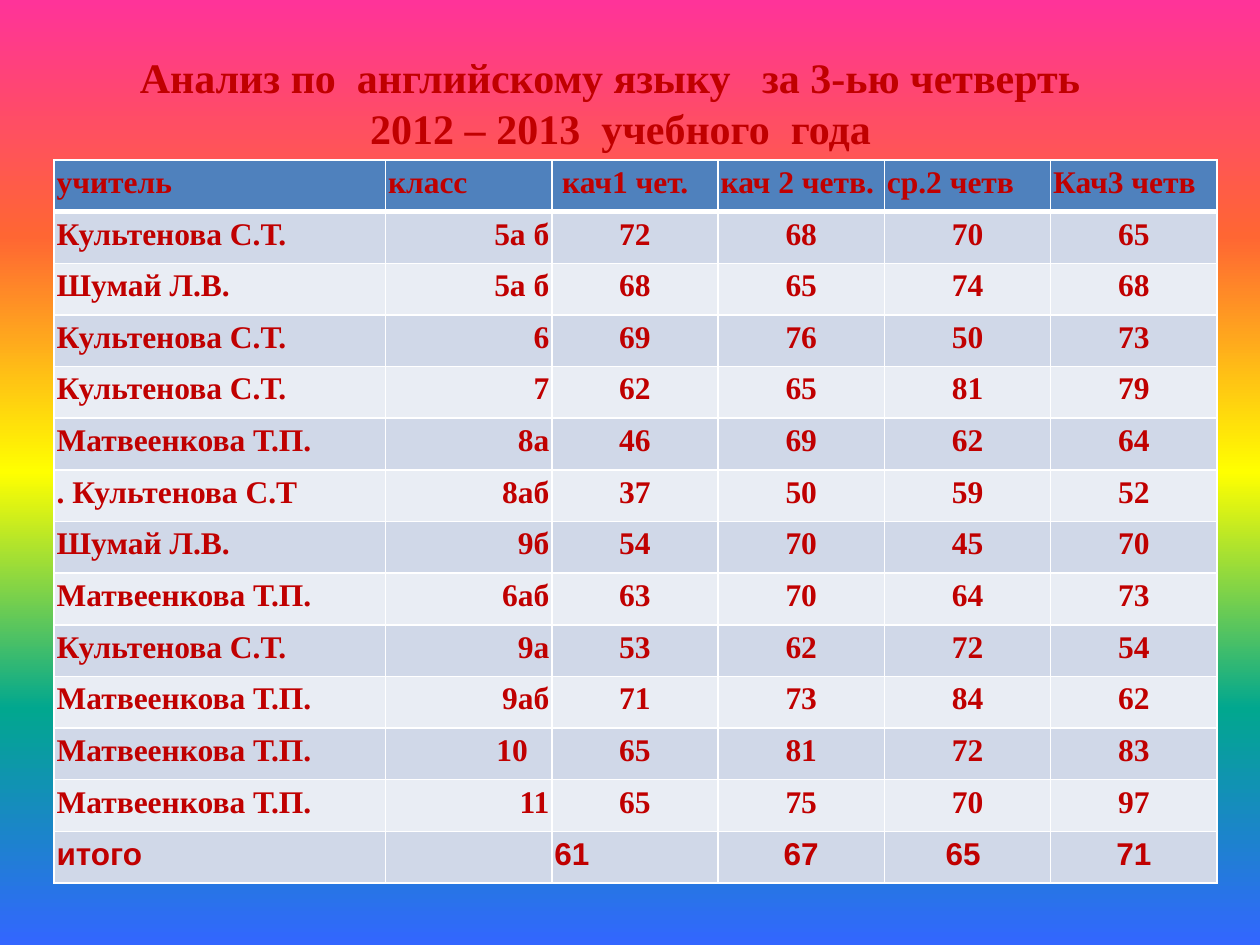
from lxml.etree import SubElement
from pptx import Presentation
from pptx.dml.color import RGBColor
from pptx.enum.text import MSO_ANCHOR, PP_ALIGN
from pptx.oxml import parse_xml
from pptx.oxml.ns import nsdecls, qn
from pptx.util import Inches, Pt

SERIF, SANS = "Times New Roman", "Arial"
TEXT, WHITE, HEADER_FILL = "C00000", "FFFFFF", "4F81BD"
BANDS = ("D0D8E8", "E9EDF4")
RAINBOW = ("FF3399", "FF6633", "FFFF00", "01A78F", "3366FF")
LEFT, CENTER, RIGHT = PP_ALIGN.LEFT, PP_ALIGN.CENTER, PP_ALIGN.RIGHT

TITLE = ("Анализ по  английскому языку   за 3-ью четверть  ",
         "2012 – 2013  учебного  года")
HEADER = ("учитель", "класс", " кач1 чет.", "кач 2 четв.", "ср.2 четв", "Кач3 четв")
RESULTS = (
    ("Культенова С.Т.", "5а б", 72, 68, 70, 65),
    ("Шумай Л.В.", "5а б", 68, 65, 74, 68),
    ("Культенова С.Т.", "6", 69, 76, 50, 73),
    ("Культенова С.Т.", "7", 62, 65, 81, 79),
    ("Матвеенкова Т.П.", "8а", 46, 69, 62, 64),
    (". Культенова С.Т", "8аб", 37, 50, 59, 52),
    ("Шумай Л.В.", "9б", 54, 70, 45, 70),
    ("Матвеенкова Т.П.", "6аб", 63, 70, 64, 73),
    ("Культенова С.Т.", "9а", 53, 62, 72, 54),
    ("Матвеенкова Т.П.", "9аб", 71, 73, 84, 62),
    ("Матвеенкова Т.П.", "10", 65, 81, 72, 83),
    ("Матвеенкова Т.П.", "11", 65, 75, 70, 97),
)
TOTALS = ("итого", "", 61, 67, "65 ", 71)
COLUMN_WIDTHS = (2.63,) + (1.32,) * 5
ROW_HEIGHT = 0.41


def rgb(color):
    return RGBColor.from_string(color)


def add_run(p, text, size, font=SERIF):
    r = p.add_run()
    r.text = text
    r.font.name, r.font.size, r.font.bold = font, Pt(size), True
    r.font.color.rgb = rgb(TEXT)


def fill_background(s, colors):
    """Spread the colours evenly from the top of the slide to the bottom."""
    fill = s.background.fill
    fill.gradient()
    fill.gradient_angle = 270
    stops = s.background._cSld.find(".//" + qn("a:gsLst"))
    for stop in list(stops):
        stops.remove(stop)
    for i, color in enumerate(colors):
        stop = SubElement(stops, qn("a:gs"), pos=str(i * 100000 // (len(colors) - 1)))
        SubElement(stop, qn("a:srgbClr"), val=color)


def add_title(s, lines):
    title = s.shapes.title
    title.left, title.top = Inches(0.2), Inches(0.36)
    title.width, title.height = Inches(9.45), Inches(0.91)
    tf = title.text_frame
    tf.word_wrap = True
    tf.vertical_anchor = MSO_ANCHOR.TOP
    for i, line in enumerate(lines):
        p = tf.add_paragraph() if i else tf.paragraphs[0]
        p.alignment = CENTER
        p.space_before = Pt(0)
        add_run(p, line, 24)


def set_borders(cell, bottom=1):
    tc_pr = cell._tc.get_or_add_tcPr()
    for i, (side, width) in enumerate(zip("LRTB", (1, 1, 1, bottom))):
        tc_pr.insert(i, parse_xml(
            f'<a:ln{side} {nsdecls("a")} w="{Pt(width)}"><a:solidFill>'
            f'<a:srgbClr val="{WHITE}"/></a:solidFill></a:ln{side}>'))


def format_cell(cell, text, fill, align, font=SERIF, bottom=1):
    cell.margin_left = cell.margin_right = Inches(0.02)
    cell.margin_top = cell.margin_bottom = 0
    cell.fill.solid()
    cell.fill.fore_color.rgb = rgb(fill)
    set_borders(cell, bottom)
    p = cell.text_frame.paragraphs[0]
    p.alignment, p.line_spacing, p.space_after = align, 1.15, Pt(10)
    if text:
        add_run(p, text, 18, font)


def add_results_table(s):
    rows = (HEADER, *RESULTS, TOTALS)
    last = len(rows) - 1
    table = s.shapes.add_table(
        len(rows), len(HEADER), Inches(0.43), Inches(1.27),
        Inches(sum(COLUMN_WIDTHS)), Inches(ROW_HEIGHT * len(rows))).table
    for column, width in zip(table.columns, COLUMN_WIDTHS):
        column.width = Inches(width)
    for i, values in enumerate(rows):
        table.rows[i].height = Inches(ROW_HEIGHT)
        fill = BANDS[(i - 1) % 2] if i else HEADER_FILL
        aligns = [LEFT, RIGHT] + [CENTER] * 4 if i else [LEFT] * 6
        if i == last:
            aligns[2] = LEFT
        for j, value in enumerate(values):
            format_cell(table.cell(i, j), str(value), fill, aligns[j],
                        SANS if i == last else SERIF, 1 if i else 3)
    # Grade 10 stands a little in from the right edge of its column.
    table.cell(last - 2, 1).margin_right = Inches(0.19)


def main():
    prs = Presentation()
    prs.slide_width, prs.slide_height = Inches(10), Inches(7.5)
    s = prs.slides.add_slide(prs.slide_layouts[5])
    fill_background(s, RAINBOW)
    add_title(s, TITLE)
    add_results_table(s)
    prs.save("out.pptx")


if __name__ == "__main__":
    main()
